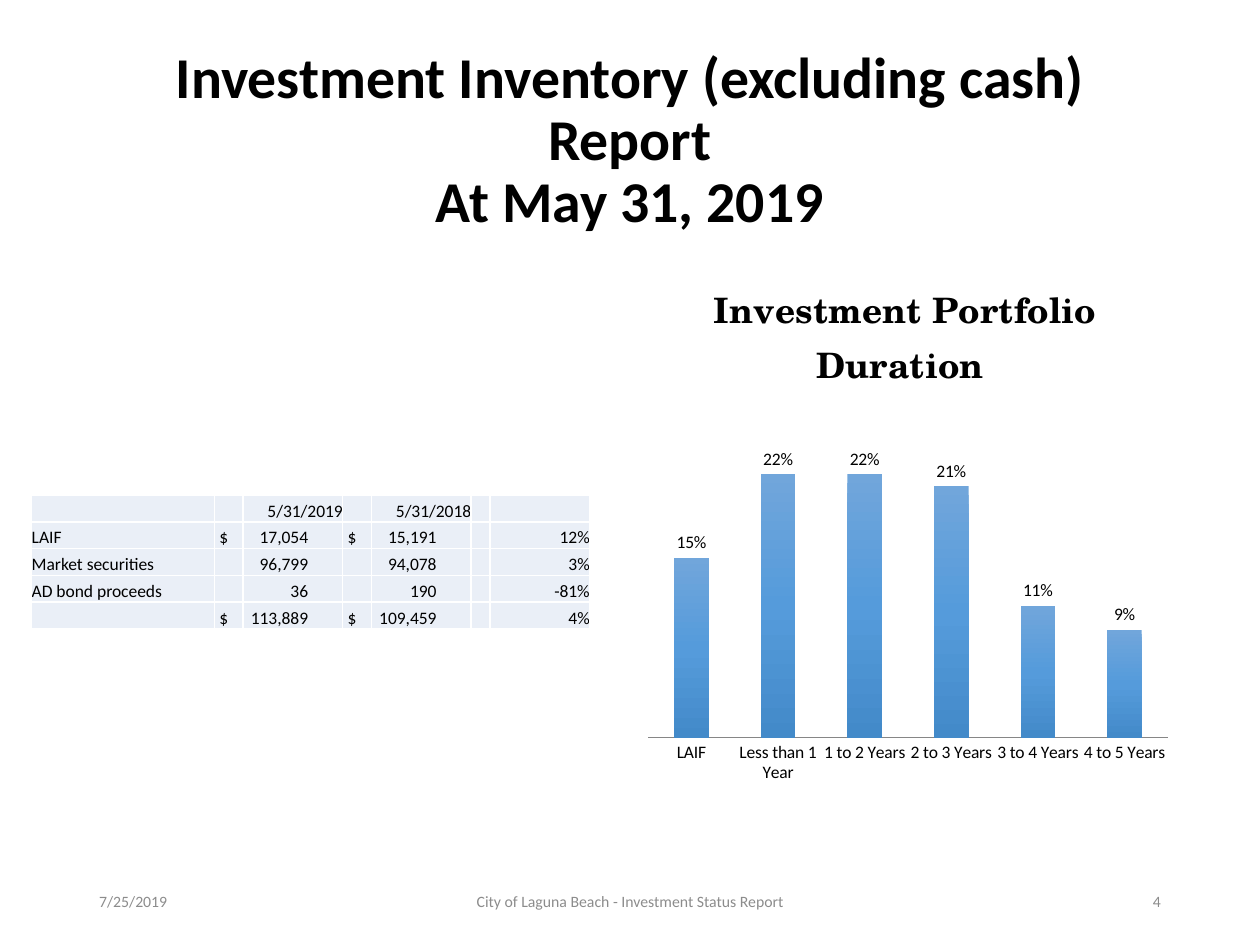
from copy import deepcopy

from lxml.etree import SubElement
from pptx import Presentation
from pptx.chart.data import CategoryChartData
from pptx.dml.color import RGBColor
from pptx.enum.chart import XL_CHART_TYPE as CT, XL_LABEL_POSITION as LP, XL_TICK_MARK as TM
from pptx.enum.text import MSO_ANCHOR as MA, PP_ALIGN as PA
from pptx.oxml import parse_xml
from pptx.oxml.ns import nsdecls, qn
from pptx.util import Cm, Pt

COLORS = {
    "text": "000000", "muted": "8C8C8C", "cell": "EAEFF7", "border": "FFFFFF",
    "axis": "868686", "bar_top": "71A6DB", "bar_mid": "559BDB", "bar_end": "438AC9",
}
COL_WIDTHS = [3.68, 0.58, 2.01, 0.58, 2.01, 0.38, 2.01]
ROWS = [
    ["", "", "5/31/2019", "", "5/31/2018", "", ""],
    ["LAIF", "$", "17,054", "$", "15,191", "", "12%"],
    ["Market securities", "", "96,799", "", "94,078", "", "3%"],
    ["AD bond proceeds", "", "36", "", "190", "", "-81%"],
    ["", "$", "113,889", "$", "109,459", "", "4%"],
]
DURATIONS = {
    "LAIF": 0.15, "Less than 1 Year": 0.22, "1 to 2 Years": 0.22,
    "2 to 3 Years": 0.21, "3 to 4 Years": 0.11, "4 to 5 Years": 0.09,
}


def rgb(name):
    """Return the named colour."""
    return RGBColor.from_string(COLORS[name])


def set_font(font, size, color="text", name="Calibri", bold=False):
    """Apply one font format."""
    font.size, font.name, font.bold = Pt(size), name, bold
    font.color.rgb = rgb(color)


def write(tf, text, align=PA.LEFT, spacing=None, **fmt):
    """Write one formatted paragraph into a text frame."""
    p = tf.paragraphs[0]
    p.alignment, p.line_spacing = align, spacing
    p.text = text
    for r in p.runs:
        set_font(r.font, **fmt)
    if not text:
        SubElement(p._p, qn("a:endParaRPr"), sz=str(fmt["size"] * 100))


def add_text(s, text, left, top, width, height, **fmt):
    """Add a wrapped, vertically centred text box."""
    tf = s.shapes.add_textbox(Cm(left), Cm(top), Cm(width), Cm(height)).text_frame
    tf.word_wrap, tf.vertical_anchor = True, MA.MIDDLE
    write(tf, text, **fmt)


def style_cell(cell):
    """Fill a cell and draw its four borders."""
    cell.fill.solid()
    cell.fill.fore_color.rgb = rgb("cell")
    tc_pr = cell._tc.get_or_add_tcPr()
    for i, side in enumerate(("lnL", "lnR", "lnT", "lnB")):
        tc_pr.insert(i, parse_xml(
            f'<a:{side} {nsdecls("a")} w="12700"><a:solidFill>'
            f'<a:srgbClr val="{COLORS["border"]}"/></a:solidFill></a:{side}>'))


def add_inventory(s):
    """Add the investment inventory table."""
    table = s.shapes.add_table(len(ROWS), len(COL_WIDTHS), Cm(0.64), Cm(9.98),
                               Cm(sum(COL_WIDTHS)), Cm(2.7)).table
    table.first_row = table.horz_banding = False
    for column, width in zip(table.columns, COL_WIDTHS):
        column.width = Cm(width)
    for i, row in enumerate(ROWS):
        table.rows[i].height = Cm(0.54)
        for j, text in enumerate(row):
            cell = table.cell(i, j)
            cell.margin_top = cell.margin_bottom = 0
            cell.margin_left = Cm(0.1 if text == "$" else 0)
            cell.margin_right = Cm(0.7 if i and j in (2, 4) else 0)
            cell.vertical_anchor = MA.BOTTOM
            write(cell.text_frame, text, PA.RIGHT if j in (2, 4, 6) else PA.LEFT, size=10)
            style_cell(cell)


def fill_bars(fill):
    """Give the bars a three-stop vertical gradient."""
    fill.gradient()
    fill.gradient_angle = 270
    first = fill.gradient_stops[0]._gs
    first.addnext(deepcopy(first))
    for stop, pos, name in zip(fill.gradient_stops, (0, 0.5, 1),
                               ("bar_top", "bar_mid", "bar_end")):
        stop.position = pos
        stop.color.rgb = rgb(name)


def place_plot(chart, x, y, w, h):
    """Fix the inner plot area as fractions of the chart."""
    area = chart._chartSpace.chart.plotArea
    for old in area.findall(qn("c:layout")):
        area.remove(old)
    sizes = "".join(f'<c:{k} val="{v}"/>' for k, v in zip("xywh", (x, y, w, h)))
    area.insert(0, parse_xml(
        f'<c:layout {nsdecls("c")}><c:manualLayout><c:layoutTarget val="inner"/>'
        f'<c:xMode val="edge"/><c:yMode val="edge"/>{sizes}</c:manualLayout></c:layout>'))


def add_durations(s):
    """Add the portfolio duration column chart."""
    data = CategoryChartData(number_format="0%")
    data.categories = list(DURATIONS)
    data.add_series("Series 1", list(DURATIONS.values()))
    chart = s.shapes.add_chart(CT.COLUMN_CLUSTERED, Cm(12.85), Cm(5.08),
                               Cm(10.8), Cm(12.09), data).chart
    set_font(chart.font, 10)
    chart.has_legend = False
    write(chart.chart_title.text_frame, "Investment Portfolio Duration ", PA.CENTER,
          size=20, name="TeX Gyre Schola", bold=True)
    chart.chart_title.include_in_layout = False
    place_plot(chart, 0.02, 0.31, 0.97, 0.5)

    values, cats = chart.value_axis, chart.category_axis
    values.minimum_scale, values.maximum_scale = 0, 0.25
    values.has_major_gridlines = values.visible = False
    cats.major_tick_mark = TM.NONE
    cats.format.line.color.rgb = rgb("axis")

    plot = chart.plots[0]
    plot.gap_width, plot.overlap, plot.vary_by_categories = 150, -25, False
    plot.has_data_labels = True
    labels = plot.data_labels
    labels.show_value, labels.position = True, LP.OUTSIDE_END
    labels.number_format, labels.number_format_is_linked = "0%", False
    set_font(labels.font, 10)
    fill_bars(plot.series[0].format.fill)


def main():
    """Build and save the slide."""
    prs = Presentation()
    prs.slide_width, prs.slide_height = Cm(25.4), Cm(19.05)
    s = prs.slides.add_slide(prs.slide_layouts[6])
    add_text(s, "Investment Inventory (excluding cash) Report\vAt May 31, 2019",
             1.75, 1.02, 21.9, 3.68, align=PA.CENTER, spacing=0.9, size=33, bold=True)
    add_inventory(s)
    for text, left, width, align in (
            ("7/25/2019", 1.75, 5.72, PA.LEFT),
            ("City of Laguna Beach - Investment Status Report", 8.41, 8.58, PA.CENTER),
            ("4", 17.93, 5.72, PA.RIGHT)):
        add_text(s, text, left, 17.65, width, 1.02, align=align, size=9, color="muted")
    add_durations(s)
    prs.save("out.pptx")


if __name__ == "__main__":
    main()
